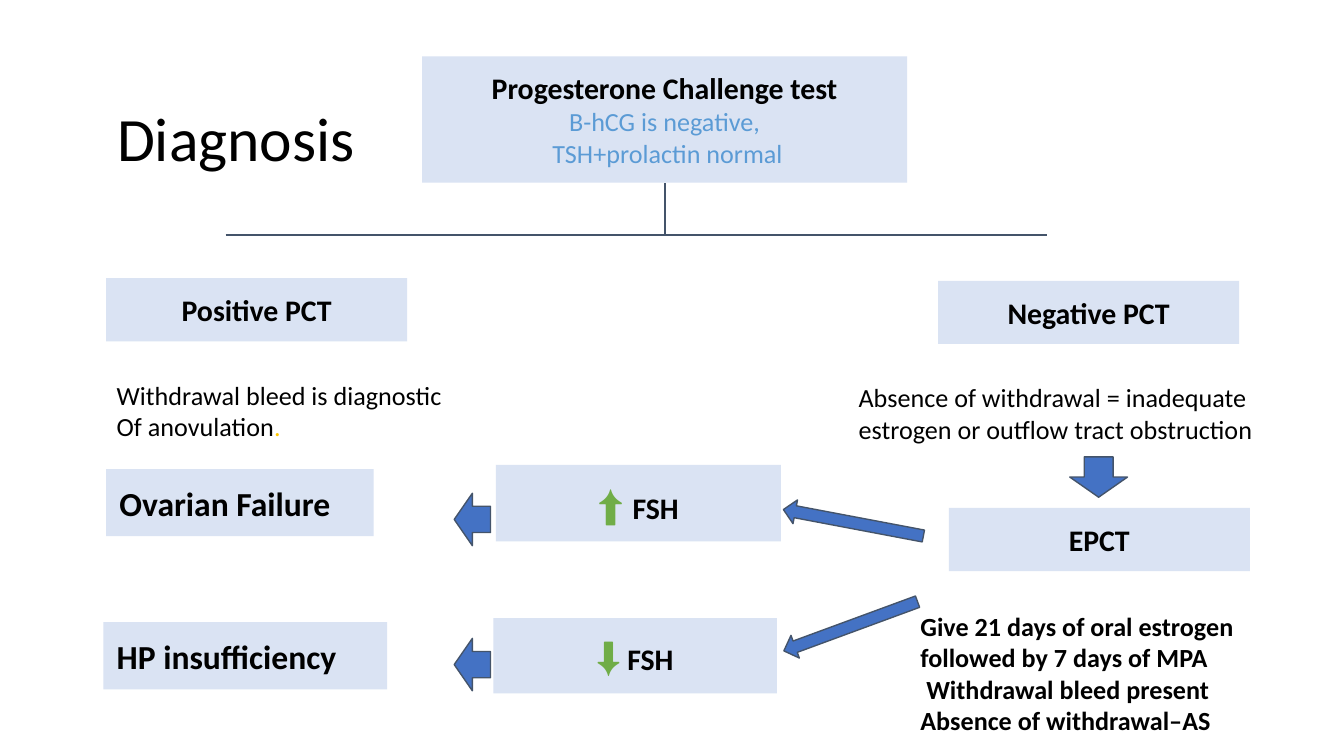
"""Build a diagnosis flowchart for the progesterone challenge test."""
from lxml import etree
from pptx import Presentation
from pptx.dml.color import RGBColor
from pptx.enum.shapes import MSO_CONNECTOR as Connector, MSO_SHAPE as Shape
from pptx.enum.text import MSO_ANCHOR as Anchor, PP_ALIGN as Align
from pptx.oxml.ns import qn
from pptx.util import Inches, Pt

BLACK = RGBColor(0x00, 0x00, 0x00)
PALE_BLUE = RGBColor(0xDA, 0xE3, 0xF3)
SKY_BLUE = RGBColor(0x5B, 0x9B, 0xD5)
ARROW_BLUE = RGBColor(0x44, 0x72, 0xC4)
SLATE = RGBColor(0x44, 0x54, 0x6A)
GREEN = RGBColor(0x70, 0xAD, 0x47)
YELLOW = RGBColor(0xFF, 0xC8, 0x00)


def write_text(paragraph, text, size=14, bold=False, color=BLACK, font="Calibri"):
    """Append formatted text to a paragraph, breaking lines at newlines."""
    for index, line in enumerate(text.split("\n")):
        if index:
            paragraph.add_line_break()
        if line:
            run = paragraph.add_run()
            run.text = line
            run.font.name = font
            run.font.size = Pt(size)
            run.font.bold = bold
            run.font.color.rgb = color


class Flowchart:
    """Hold the chart style and the current slide."""

    margin = Inches(0.1)
    line_width = Pt(0.75)

    def __init__(self, presentation):
        self.slide = presentation.slides.add_slide(presentation.slide_layouts[5])

    def frame(self, shape, anchor=Anchor.TOP):
        """Set the margins, wrapping and anchor of a shape's text."""
        frame = shape.text_frame
        frame.margin_left = frame.margin_right = self.margin
        frame.margin_top = frame.margin_bottom = self.margin
        frame.word_wrap = True
        frame.vertical_anchor = anchor
        return frame

    def title(self, text, left, top, width, height):
        """Place the slide title."""
        title = self.slide.shapes.title
        title.left, title.top = Inches(left), Inches(top)
        title.width, title.height = Inches(width), Inches(height)
        paragraph = self.frame(title, Anchor.MIDDLE).paragraphs[0]
        paragraph.alignment = Align.CENTER
        paragraph.line_spacing = 0.9
        write_text(paragraph, text, size=33)

    def shape(self, kind, left, top, width, height, fill):
        """Add a filled preset shape without line or shadow."""
        shape = self.slide.shapes.add_shape(
            kind, Inches(left), Inches(top), Inches(width), Inches(height))
        shape.shadow.inherit = False
        shape.fill.solid()
        shape.fill.fore_color.rgb = fill
        shape.line.fill.background()
        return shape

    def box(self, left, top, width, height):
        """Add a pale box and return its text frame."""
        return self.frame(self.shape(Shape.RECTANGLE, left, top, width, height, PALE_BLUE))

    def label(self, left, top, width, height, align=Align.CENTER):
        """Add a pale box and return its only paragraph."""
        paragraph = self.box(left, top, width, height).paragraphs[0]
        paragraph.alignment = align
        return paragraph

    def note(self, left, top, width, height):
        """Add a text box and return its text frame."""
        return self.frame(self.slide.shapes.add_textbox(
            Inches(left), Inches(top), Inches(width), Inches(height)))

    def arrow(self, kind, left, top, width, height, rotation=0):
        """Add an outlined block arrow."""
        shape = self.shape(kind, left, top, width, height, ARROW_BLUE)
        shape.line.color.rgb = SLATE
        shape.line.width = self.line_width
        shape.rotation = rotation

    def branch(self, start_x, start_y, end_x, end_y):
        """Add a connector with one bend, running sideways and then up."""
        connector = self.slide.shapes.add_connector(
            Connector.ELBOW, Inches(start_x), Inches(start_y), Inches(end_x), Inches(end_y))
        connector.line.color.rgb = SLATE
        connector.line.width = self.line_width
        properties = connector._element.spPr
        properties.find(qn("a:prstGeom")).set("prst", "bentConnector2")
        etree.SubElement(properties, qn("a:effectLst"))


def main():
    """Build and save the slide."""
    presentation = Presentation()
    presentation.slide_width = Inches(10)
    presentation.slide_height = Inches(10) * 9 // 16
    chart = Flowchart(presentation)
    chart.title("Diagnosis", -0.13, 0.74, 3.77, 0.63)

    test_frame = chart.box(3.14, 0.42, 3.61, 0.94)
    test, condition = test_frame.paragraphs[0], test_frame.add_paragraph()
    test.alignment = condition.alignment = Align.CENTER
    write_text(test, "Progesterone Challenge test\n", size=16, bold=True)
    write_text(test, "B-hCG is negative,", color=SKY_BLUE)
    write_text(condition, " TSH+prolactin normal", color=SKY_BLUE)
    for outer_x in (1.68, 7.79):
        chart.branch(outer_x, 1.75, 4.95, 1.36)

    for text, left, top in (("Positive PCT", 0.79, 2.07),
                            ("Negative PCT", 6.98, 2.09),
                            ("EPCT", 7.06, 3.78)):
        write_text(chart.label(left, top, 2.24, 0.47), text, size=16, bold=True)

    positive = chart.note(0.77, 2.72, 3.14, 0.67).paragraphs[0]
    write_text(positive, "Withdrawal bleed is diagnostic\nOf anovulation")
    write_text(positive, ".", color=YELLOW)
    negative = chart.note(6.29, 2.74, 3.39, 0.67).paragraphs[0]
    write_text(negative, "Absence of withdrawal = inadequate \nestrogen or outflow tract obstruction")
    regimen = chart.note(6.75, 4.44, 3.2, 1.14)
    write_text(regimen.paragraphs[0],
               "Give 21 days of oral estrogen \nfollowed by 7 days of MPA\n Withdrawal bleed present",
               bold=True)
    write_text(regimen.add_paragraph(), "Absence of withdrawal–AS", bold=True)

    chart.arrow(Shape.DOWN_ARROW, 7.96, 3.4, 0.43, 0.3)
    chart.arrow(Shape.LEFT_ARROW, 5.82, 3.8, 1.06, 0.18, rotation=10.7)
    chart.arrow(Shape.LEFT_ARROW, 5.8, 4.57, 1.06, 0.18, rotation=339.8)
    for top in (3.67, 4.75):
        chart.arrow(Shape.LEFT_ARROW, 3.38, top, 0.27, 0.39)

    rising = chart.label(3.69, 3.46, 2.12, 0.57)
    write_text(rising, "⬆ ", size=22, bold=True, color=GREEN)
    write_text(rising, "FSH", size=16, bold=True)
    falling = chart.label(3.67, 4.6, 2.11, 0.56)
    write_text(falling, "⬇", size=21, bold=True, color=GREEN)
    write_text(falling, " FSH", size=16, bold=True)

    for text, left, top, width in (("Ovarian Failure", 0.79, 3.49, 1.99),
                                   ("HP insufficiency", 0.77, 4.63, 2.11)):
        write_text(chart.label(left, top, width, 0.5, Align.LEFT), text, size=18, bold=True)

    presentation.save("out.pptx")


if __name__ == "__main__":
    main()
